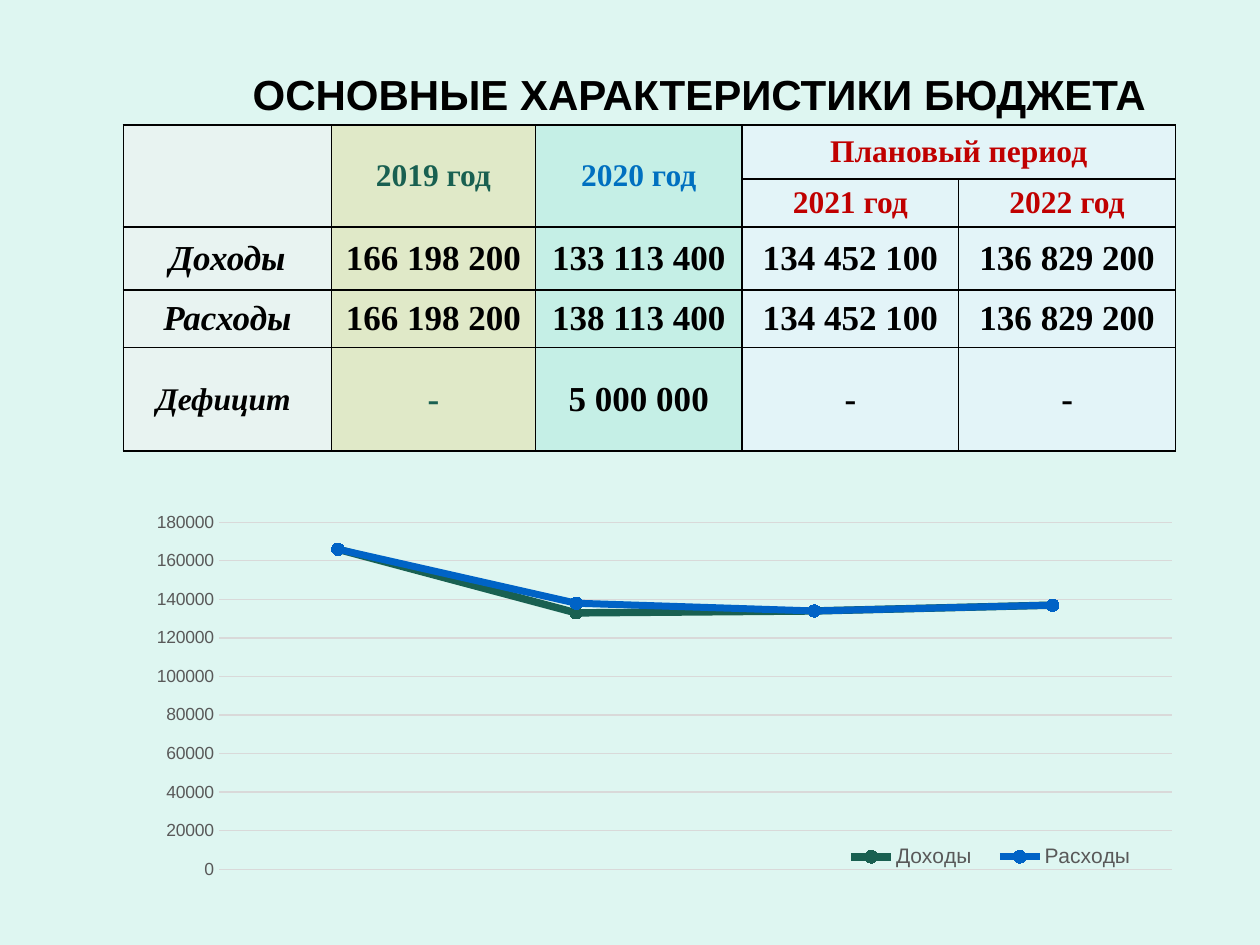
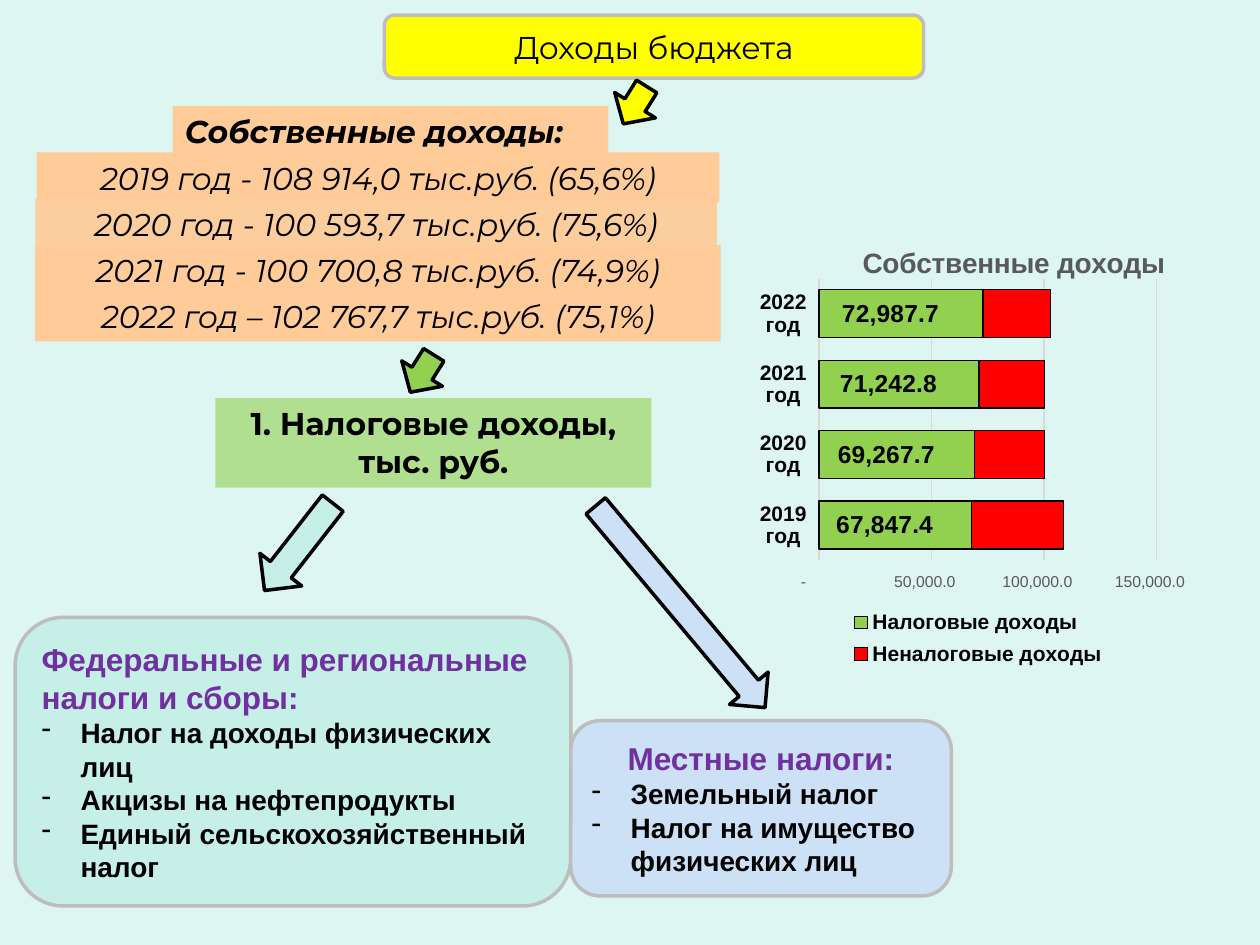
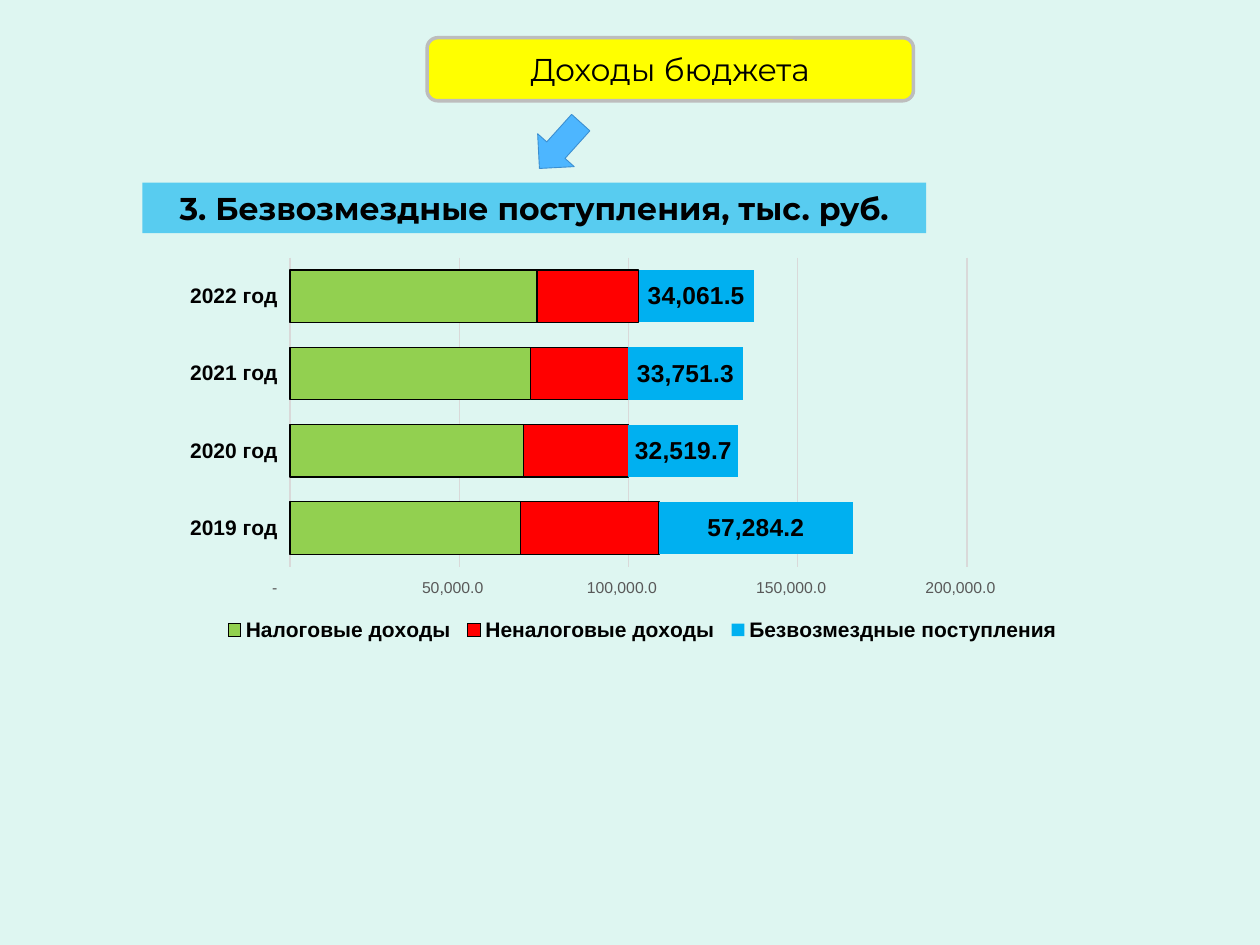
from lxml import etree
from pptx import Presentation
from pptx import util as u
from pptx.chart.data import CategoryChartData
from pptx.dml.color import RGBColor
from pptx.enum import chart as charts, shapes, text
from pptx.oxml import parse_xml
from pptx.oxml.ns import nsdecls, qn

# Slide grid: 100 columns by 75 rows
WIDTH, HEIGHT = u.Inches(10), u.Inches(7.5)
COLUMN, ROW = WIDTH / 100, HEIGHT / 75

# Colours and fonts
BACKGROUND = RGBColor(0xDE, 0xF6, 0xF1)
BLACK = RGBColor(0, 0, 0)
GREY_TEXT = RGBColor(0x59, 0x59, 0x59)
GRID_GREY = RGBColor(0xD9, 0xD9, 0xD9)
EDGE_GREY = RGBColor(0xBD, 0xBD, 0xBD)
PALE_GREY = RGBColor(0xF2, 0xF2, 0xF2)
GOLD = RGBColor(0xE6, 0xCC, 0x6C)
TEAL = RGBColor(0x8C, 0xE1, 0xCF)
SKY = RGBColor(0xE8, 0xF4, 0xFF)
DARK_GREEN = RGBColor(0x19, 0x60, 0x51)
YEAR_BLUE = RGBColor(0x00, 0x70, 0xC0)
LINE_BLUE = RGBColor(0x00, 0x63, 0xC6)
DARK_RED = RGBColor(0xC0, 0, 0)
YELLOW = RGBColor(0xFF, 0xFF, 0)
PEACH = RGBColor(0xFF, 0xCC, 0x99)
GREEN = RGBColor(0x92, 0xD0, 0x50)
MINT = RGBColor(0xC6, 0xF0, 0xE7)
PALE_BLUE = RGBColor(0xCC, 0xE1, 0xF5)
PURPLE = RGBColor(0x70, 0x30, 0xA0)
RED = RGBColor(0xFF, 0, 0)
CYAN = RGBColor(0, 0xB0, 0xF0)
ARROW_BLUE = RGBColor(0x4D, 0xB6, 0xFF)
ARROW_EDGE = RGBColor(0x3C, 0x8F, 0xD0)
SANS, DISPLAY, SERIF = "Arial", "Montserrat", "Times New Roman"

CENTER, LEFT = text.PP_ALIGN.CENTER, text.PP_ALIGN.LEFT
YEARS = ["2019 год", "2020 год", "2021 год", "2022 год"]
ACCOUNTING = r'_-* #,##0.0_р_._-;\-* #,##0.0_р_._-;_-* "-"??_р_._-;_-@_-'
BAR_PLOT = (0.157, 0.095, 0.726, 0.623)
OTHER_INCOME = ("Неналоговые доходы", [41000, 31000, 29000, 30000], RED, BLACK, None)


def area(left, top, width, height):
    """Turn grid columns and rows into slide lengths."""
    return (round(left * COLUMN), round(top * ROW),
            round(width * COLUMN), round(height * ROW))


def style_font(font, size, color=BLACK, name=SANS, bold=False, italic=False):
    font.size, font.name = u.Pt(size), name
    font.bold, font.italic = bold, italic
    font.color.rgb = color


def write(para, words, size, align=CENTER, **style):
    para.alignment = align
    span = para.add_run()
    span.text = words
    style_font(span.font, size, **style)


def paint(fill, color, opacity=100):
    fill.solid()
    fill.fore_color.rgb = color
    if opacity < 100:
        for node in fill._xPr.iter(qn("a:srgbClr")):
            etree.SubElement(node, qn("a:alpha")).set("val", str(opacity * 1000))


# Shapes and text
def shape(page, kind, place, fill, edge, edge_width=2):
    box = page.shapes.add_shape(kind, *area(*place))
    box.shadow.inherit = False
    paint(box.fill, fill)
    box.line.color.rgb = edge
    box.line.width = u.Pt(edge_width)
    return box


def arrow(page, place, turn, fill, edge=BLACK, edge_width=2):
    box = shape(page, shapes.MSO_SHAPE.DOWN_ARROW, place, fill, edge, edge_width)
    box.rotation = turn


def panel(page, place, fill):
    box = shape(page, shapes.MSO_SHAPE.ROUNDED_RECTANGLE, place, fill, EDGE_GREY)
    box.text_frame.word_wrap = True
    box.text_frame.vertical_anchor = text.MSO_ANCHOR.MIDDLE
    return box.text_frame


def heading(page, place):
    write(panel(page, place, YELLOW).paragraphs[0], "Доходы бюджета", 18, name=DISPLAY)


def tax_list(page, place, fill, title, align, items):
    frame = panel(page, place, fill)
    write(frame.paragraphs[0], title, 18, align, color=PURPLE, bold=True)
    for item in items:
        para = frame.add_paragraph()
        properties = para._p.get_or_add_pPr()
        properties.set("marL", str(u.Inches(0.31)))
        properties.set("indent", str(-u.Inches(0.31)))
        etree.SubElement(properties, qn("a:buChar")).set("char", "-")
        write(para, item, 16, LEFT, bold=True)


def band(page, place, fill, words, opacity=100, align=CENTER, **style):
    box = page.shapes.add_textbox(*area(*place))
    paint(box.fill, fill, opacity)
    box.text_frame.word_wrap = True
    box.text_frame.auto_size = text.MSO_AUTO_SIZE.SHAPE_TO_FIT_TEXT
    write(box.text_frame.paragraphs[0], words, 18, align, name=DISPLAY, **style)


# Table
def outline(cell):
    properties = cell._tc.get_or_add_tcPr()
    for index, side in enumerate(("lnL", "lnR", "lnT", "lnB")):
        properties.insert(index, parse_xml(
            f'<a:{side} {nsdecls("a")} w="12700"><a:solidFill>'
            f'<a:srgbClr val="{BLACK}"/></a:solidFill></a:{side}>'))


def budget_table(page):
    widths, heights = [16.5, 16.2, 16.4, 17.2, 17.2], [4.3, 3.8, 5, 4.6, 8.2]
    fills = [(PALE_GREY, 53), (GOLD, 30), (TEAL, 30), (SKY, 50), (SKY, 50)]
    rows = [
        ["", YEARS[0], YEARS[1], "Плановый период", ""],
        ["", "", "", YEARS[2], YEARS[3]],
        ["Доходы", "166 198 200", "133 113 400", "134 452 100", "136 829 200"],
        ["Расходы", "166 198 200", "138 113 400", "134 452 100", "136 829 200"],
        ["Дефицит ", "-", "5 000 000", "-", "-"],
    ]
    head_colors = [BLACK, DARK_GREEN, YEAR_BLUE, DARK_RED, DARK_RED]
    table = page.shapes.add_table(
        len(rows), len(widths), *area(9.8, 9.9, sum(widths), sum(heights))).table
    for column, width in zip(table.columns, widths):
        column.width = round(width * COLUMN)
    for row, height in zip(table.rows, heights):
        row.height = round(height * ROW)
    for i, row in enumerate(rows):
        for j, words in enumerate(row):
            cell = table.cell(i, j)
            cell.margin_left = cell.margin_right = u.Inches(0.07)
            cell.margin_top = cell.margin_bottom = 0
            cell.vertical_anchor = text.MSO_ANCHOR.MIDDLE
            paint(cell.fill, *fills[j])
            outline(cell)
            if words:
                small = i < 2 or (i, j) == (4, 0)
                color = head_colors[j] if i < 2 or (i, j) == (4, 1) else BLACK
                write(cell.text_frame.paragraphs[0], words, 18 if small else 20,
                      color=color, name=SERIF, bold=True, italic=j == 0)
    for j in range(3):
        table.cell(0, j).merge(table.cell(1, j))
    table.cell(0, 3).merge(table.cell(0, 4))


# Charts
def set_layout(part, index, shares, inner=False):
    """Place a chart part by shares of the chart's size."""
    for old in part.findall(qn("c:layout")):
        part.remove(old)
    layout = parse_xml(f'<c:layout {nsdecls("c")}><c:manualLayout/></c:layout>')
    manual = layout[0]
    settings = [("layoutTarget", "inner")] if inner else []
    settings += [("xMode", "edge"), ("yMode", "edge")]
    settings += zip("xywh", shares)
    for name, value in settings:
        etree.SubElement(manual, qn(f"c:{name}")).set("val", str(value))
    part.insert(index, layout)


def base_chart(page, kind, place, series, plot, legend, legend_color=BLACK, bold=False):
    data = CategoryChartData()
    data.categories = YEARS
    for name, values, *_ in series:
        data.add_series(name, values)
    chart = page.shapes.add_chart(kind, *area(*place), data).chart
    chart.has_title = False
    style_font(chart.font, 10)
    chart.plots[0].vary_by_categories = False
    chart.has_legend = True
    chart.legend.position = charts.XL_LEGEND_POSITION.BOTTOM
    chart.legend.include_in_layout = False
    style_font(chart.legend.font, 12, legend_color, bold=bold)
    set_layout(chart.legend._element, 1, legend)
    set_layout(chart._chartSpace.chart.plotArea, 0, plot, inner=True)
    axis = chart.value_axis
    axis.minimum_scale = 0
    axis.format.line.fill.background()
    axis.major_gridlines.format.line.color.rgb = GRID_GREY
    axis.major_gridlines.format.line.width = u.Pt(0.75)
    return chart


def budget_lines(page):
    series = [("Доходы", [166000, 133000, 134000, 137000], DARK_GREEN, 4.25),
              ("Расходы", [166000, 138000, 134000, 137000], LINE_BLUE, 4)]
    chart = base_chart(page, charts.XL_CHART_TYPE.LINE_MARKERS, (9.8, 39.9, 85, 29.9),
                       series, (0.089, 0.052, 0.89, 0.921), (0.66, 0.89, 0.3, 0.1), GREY_TEXT)
    chart.category_axis.visible = False
    axis = chart.value_axis
    axis.maximum_scale, axis.major_unit = 180000, 20000
    axis.major_tick_mark = charts.XL_TICK_MARK.NONE
    style_font(axis.tick_labels.font, 10, GREY_TEXT)
    for line, (_, _, color, width) in zip(chart.plots[0].series, series):
        line.smooth = False
        line.format.line.color.rgb = color
        line.format.line.width = u.Pt(width)
        line.marker.style = charts.XL_MARKER_STYLE.CIRCLE
        line.marker.size = 7
        paint(line.marker.format.fill, color)
        line.marker.format.line.color.rgb = color


def income_bars(page, place, series, top, legend):
    chart = base_chart(page, charts.XL_CHART_TYPE.BAR_STACKED, place, series,
                       BAR_PLOT, legend, bold=True)
    chart.plots[0].gap_width, chart.plots[0].overlap = 47, 100
    chart.category_axis.format.line.fill.background()
    style_font(chart.category_axis.tick_labels.font, 12, bold=True)
    axis = chart.value_axis
    axis.maximum_scale, axis.major_unit = top, 50000
    axis.tick_labels.number_format = ACCOUNTING
    axis.tick_labels.number_format_is_linked = False
    style_font(axis.tick_labels.font, 9, GREY_TEXT)
    for bar, (_, _, color, edge, label_format) in zip(chart.plots[0].series, series):
        paint(bar.format.fill, color)
        if edge is not None:
            bar.format.line.color.rgb = edge
            bar.format.line.width = u.Pt(0.75)
        if label_format:
            labels = bar.data_labels
            labels.show_value = True
            labels.number_format = label_format
            labels.number_format_is_linked = False
            labels.position = charts.XL_LABEL_POSITION.CENTER
            style_font(labels.font, 14, bold=True)
    return chart


# Slides
def budget_slide(page):
    title = page.shapes.title
    title.left, title.top, title.width, title.height = area(15.5, 4, 80, 6.9)
    title.text_frame.vertical_anchor = text.MSO_ANCHOR.MIDDLE
    write(title.text_frame.paragraphs[0], "ОСНОВНЫЕ ХАРАКТЕРИСТИКИ БЮДЖЕТА", 24, bold=True)
    budget_table(page)
    budget_lines(page)


def own_income_slide(page):
    heading(page, (30.5, 1.2, 42.8, 5))
    arrow(page, (31.6, 27.9, 3.8, 3.5), 32, GREEN)
    tax_list(page, (1.2, 49, 44.1, 22.9), MINT,
             "Федеральные и региональные налоги и сборы:", LEFT,
             ["Налог на доходы физических лиц", "Акцизы на нефтепродукты",
              "Единый сельскохозяйственный налог"])
    tax_list(page, (45.3, 57.2, 30.2, 13.9), PALE_BLUE, "Местные налоги:", CENTER,
             ["Земельный налог", "Налог на имущество физических лиц"])
    arrow(page, (52, 37.7, 4, 20.9), 320, PALE_BLUE)
    arrow(page, (21.6, 39, 4.2, 8.8), 38, MINT)

    # Yearly totals
    band(page, (13.7, 8.4, 34.6, 4), PEACH, "Собственные доходы:",
         align=LEFT, bold=True, italic=True)
    totals = [(2.9, 54.2, 100, "2019 год - 108 914,0 тыс.руб. (65,6%)"),
              (2.8, 54.1, 95, "2020 год - 100 593,7 тыс.руб. (75,6%)"),
              (2.8, 54.4, 100, "2021 год - 100 700,8 тыс.руб. (74,9%)"),
              (2.8, 54.4, 100, "2022 год – 102 767,7 тыс.руб. (75,1%)")]
    for index, (left, width, opacity, words) in enumerate(totals):
        band(page, (left, 12.1 + 3.67 * index, width, 4), PEACH, words, opacity, italic=True)
    band(page, (17.1, 31.6, 34.6, 7.1), GREEN, "1. Налоговые доходы, тыс. руб.", 60, bold=True)
    arrow(page, (48.5, 6.6, 3.8, 3.5), 32, YELLOW)

    taxes = ("Налоговые доходы", [67847.4, 69267.7, 71242.8, 72987.7],
             GREEN, BLACK, ACCOUNTING)
    chart = income_bars(page, (59.2, 18.7, 36.9, 35.9), [taxes, OTHER_INCOME],
                        150000, (0.2, 0.81, 0.6, 0.16))
    write(chart.chart_title.text_frame.paragraphs[0], "Собственные доходы", 16,
          color=GREY_TEXT, bold=True)
    chart.chart_title.include_in_layout = False
    set_layout(chart.chart_title._element, 1, (0.24, 0.01))


def transfers_slide(page):
    heading(page, (33.9, 3, 38.6, 5))
    arrow(page, (42.5, 9.1, 3.9, 4.9), 42, ARROW_BLUE, ARROW_EDGE, 0.5)
    band(page, (11.3, 14.5, 62.2, 4), CYAN, "3. Безвозмездные поступления, тыс. руб.",
         60, bold=True)
    series = [("Налоговые доходы", [68000, 69000, 71000, 73000], GREEN, BLACK, None),
              OTHER_INCOME,
              ("Безвозмездные поступления", [57284.2, 32519.7, 33751.3, 34061.5],
               CYAN, None, "#,##0.0")]
    income_bars(page, (11.4, 16.7, 74, 39.4), series, 200000, (0.08, 0.81, 0.91, 0.07))


def main():
    deck = Presentation()
    deck.slide_width, deck.slide_height = WIDTH, HEIGHT
    paint(deck.slide_master.background.fill, BACKGROUND)
    title_only, blank = deck.slide_layouts[5], deck.slide_layouts[6]
    for layout, build in ((title_only, budget_slide), (blank, own_income_slide),
                          (blank, transfers_slide)):
        build(deck.slides.add_slide(layout))
    deck.save("out.pptx")


if __name__ == "__main__":
    main()
